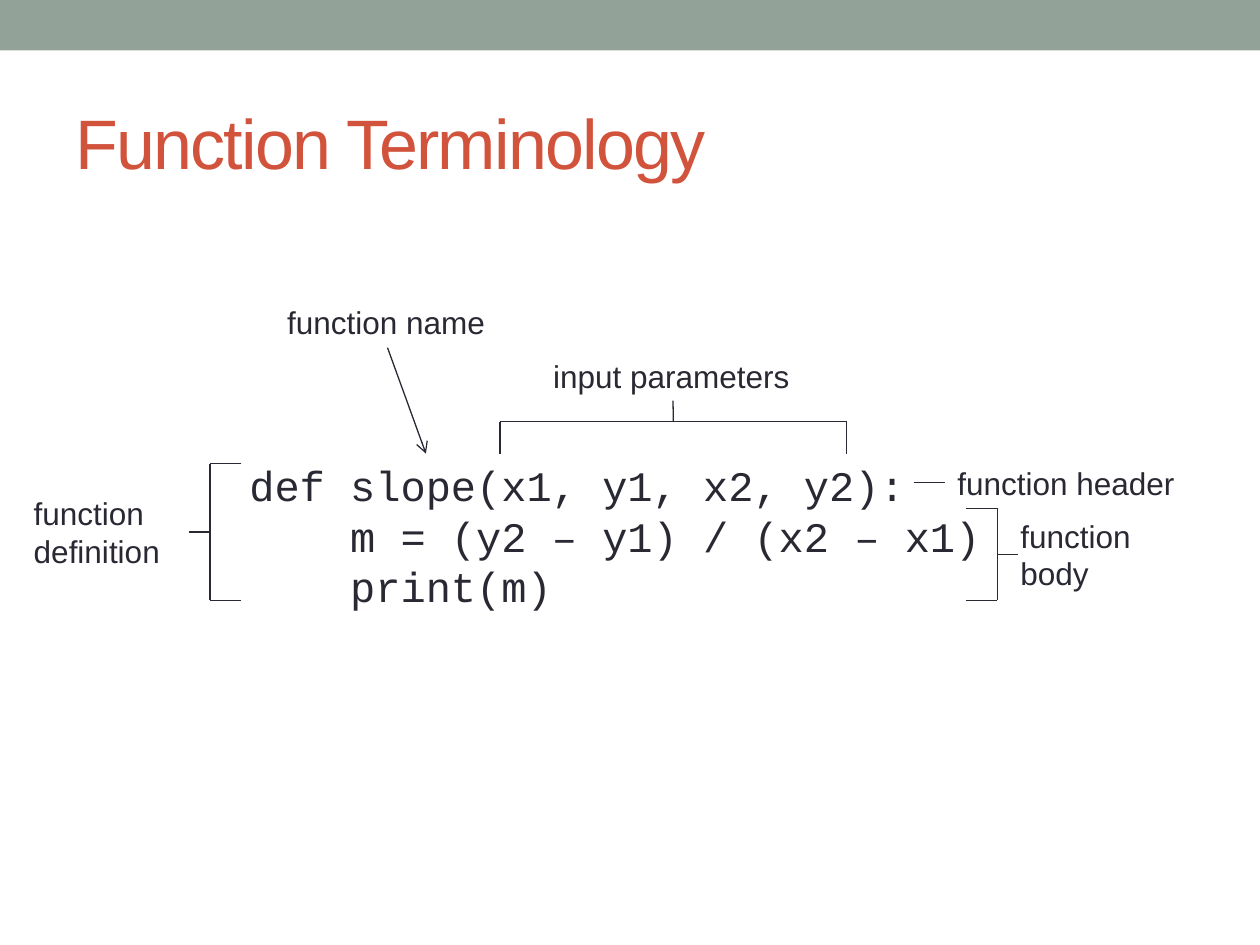
from dataclasses import dataclass

from lxml import etree
from pptx import Presentation
from pptx.dml.color import RGBColor
from pptx.enum.shapes import MSO_CONNECTOR, MSO_SHAPE
from pptx.enum.text import MSO_ANCHOR, MSO_AUTO_SIZE
from pptx.oxml.ns import qn
from pptx.util import Pt

RECTANGLE = MSO_SHAPE.RECTANGLE
STRAIGHT = MSO_CONNECTOR.STRAIGHT
MIDDLE, TOP = MSO_ANCHOR.MIDDLE, MSO_ANCHOR.TOP
FIT_SHAPE, NO_FIT = MSO_AUTO_SIZE.SHAPE_TO_FIT_TEXT, MSO_AUTO_SIZE.NONE
LEFT_SIDE, BOTTOM_SIDE = 1, 2


@dataclass(frozen=True)
class Theme:
    band: RGBColor = RGBColor(0x93, 0xA2, 0x99)
    accent: RGBColor = RGBColor(0xD2, 0x53, 0x3C)
    ink: RGBColor = RGBColor(0x29, 0x29, 0x34)
    text_font: str = "Arial"
    code_font: str = "Courier New"
    title_size: int = 40
    code_size: int = 24
    label_size: int = 18
    line_width: float = 0.75


class SlideBuilder:
    def __init__(self, slide, theme):
        self.slide = slide
        self.theme = theme

    def band(self, left, top, width, height):
        shape = self.slide.shapes.add_shape(
            RECTANGLE, Pt(left), Pt(top), Pt(width), Pt(height))
        shape.shadow.inherit = False
        shape.fill.solid()
        shape.fill.fore_color.rgb = self.theme.band
        shape.line.fill.background()

    def text(self, content, box, font, size, color, wrap=True, fit=FIT_SHAPE, anchor=TOP):
        shape = self.slide.shapes.add_textbox(*(Pt(length) for length in box))
        frame = shape.text_frame
        frame.text = content
        frame.word_wrap = wrap
        frame.auto_size = fit
        frame.vertical_anchor = anchor
        for paragraph in frame.paragraphs:
            for run in paragraph.runs:
                run.font.name = font
                run.font.size = Pt(size)
                run.font.color.rgb = color
        return shape

    def title(self, content, box):
        theme = self.theme
        shape = self.text(content, box, theme.text_font, theme.title_size,
                          theme.accent, fit=NO_FIT, anchor=MIDDLE)
        run = shape.text_frame.paragraphs[0].runs[0]
        run.font._element.set("spc", "-100")

    def code(self, content, box):
        theme = self.theme
        self.text(content, box, theme.code_font, theme.code_size, theme.ink)

    def label(self, content, box):
        theme = self.theme
        return self.text(content, box, theme.text_font, theme.label_size,
                         theme.ink, wrap=False)

    def line(self, start, end, arrow=False):
        connector = self.slide.shapes.add_connector(
            STRAIGHT, *(Pt(length) for length in (*start, *end)))
        connector.line.color.rgb = self.theme.ink
        connector.line.width = Pt(self.theme.line_width)
        if arrow:
            etree.SubElement(connector.line._get_or_add_ln(), qn("a:tailEnd"), type="arrow")
        etree.SubElement(connector._element.spPr, qn("a:effectLst"))
        return connector

    def bracket(self, corners, stem_end):
        """Join four corners and draw a stem from the middle of the spine."""
        for start, end in zip(corners, corners[1:]):
            self.line(start, end)
        middle = [(a + b) / 2 for a, b in zip(corners[1], corners[2])]
        return self.line(middle, stem_end)


def main():
    presentation = Presentation()
    presentation.slide_width, presentation.slide_height = Pt(720), Pt(540)
    slide = presentation.slides.add_slide(presentation.slide_layouts[6])
    builder = SlideBuilder(slide, Theme())

    # Heading
    builder.band(0, 0, 720, 28.8)
    builder.title("Function Terminology", (36, 41.8, 648, 77.8))

    # Code being explained
    builder.code(
        "def slope(x1, y1, x2, y2):\n"
        "    m = (y2 – y1) / (x2 – x1)\n"
        "    print(m)",
        (135.4, 259.2, 444.2, 94.3))

    # Labels
    name = builder.label("function name", (157, 169.9, 128.9, 28.8))
    parameters = builder.label("input parameters", (309, 200.2, 151.2, 28.8))
    builder.label("function\ndefinition", (12.2, 278.6, 87.1, 51.1))
    builder.label("function\nbody", (576, 291.6, 78.5, 51.1))
    header = builder.label("function header", (540, 261.4, 139.7, 28.8))

    # Function name arrow and header line
    builder.line((221, 199), (243.4, 259.2), arrow=True).begin_connect(name, BOTTOM_SIDE)
    builder.line((522, 275.8), (540, 275.8)).end_connect(header, LEFT_SIDE)

    # Brackets for parameters, definition and body
    stem = builder.bracket(
        [(285.8, 259.2), (285.8, 241), (483.8, 241), (483.8, 259.2)], (384.6, 229))
    stem.end_connect(parameters, BOTTOM_SIDE)
    builder.bracket([(138, 265), (120, 265), (120, 343), (138, 343)], (108, 304))
    builder.bracket([(552, 290.4), (570, 290.4), (570, 343), (552, 343)], (582, 316.7))

    presentation.save("out.pptx")


if __name__ == "__main__":
    main()
